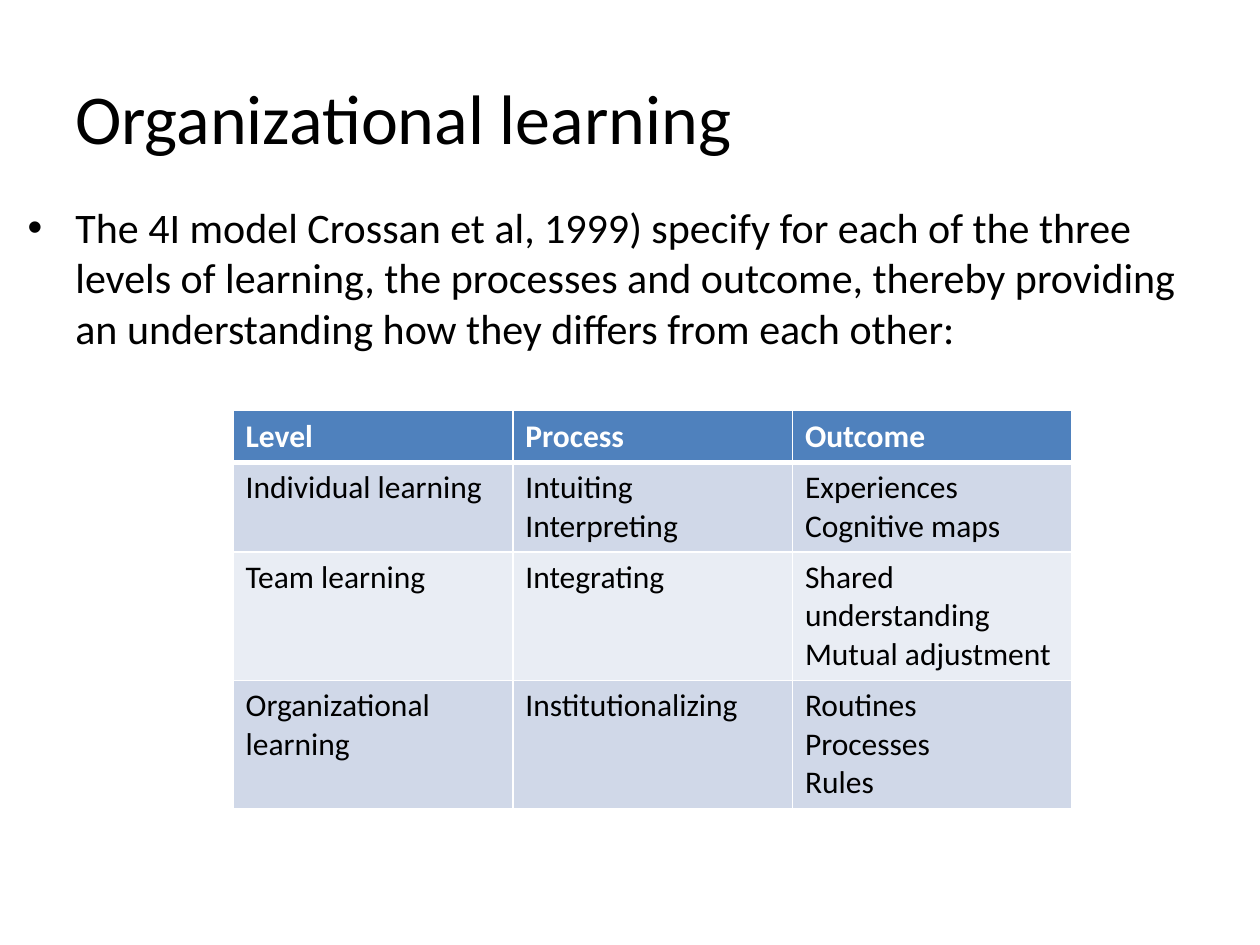
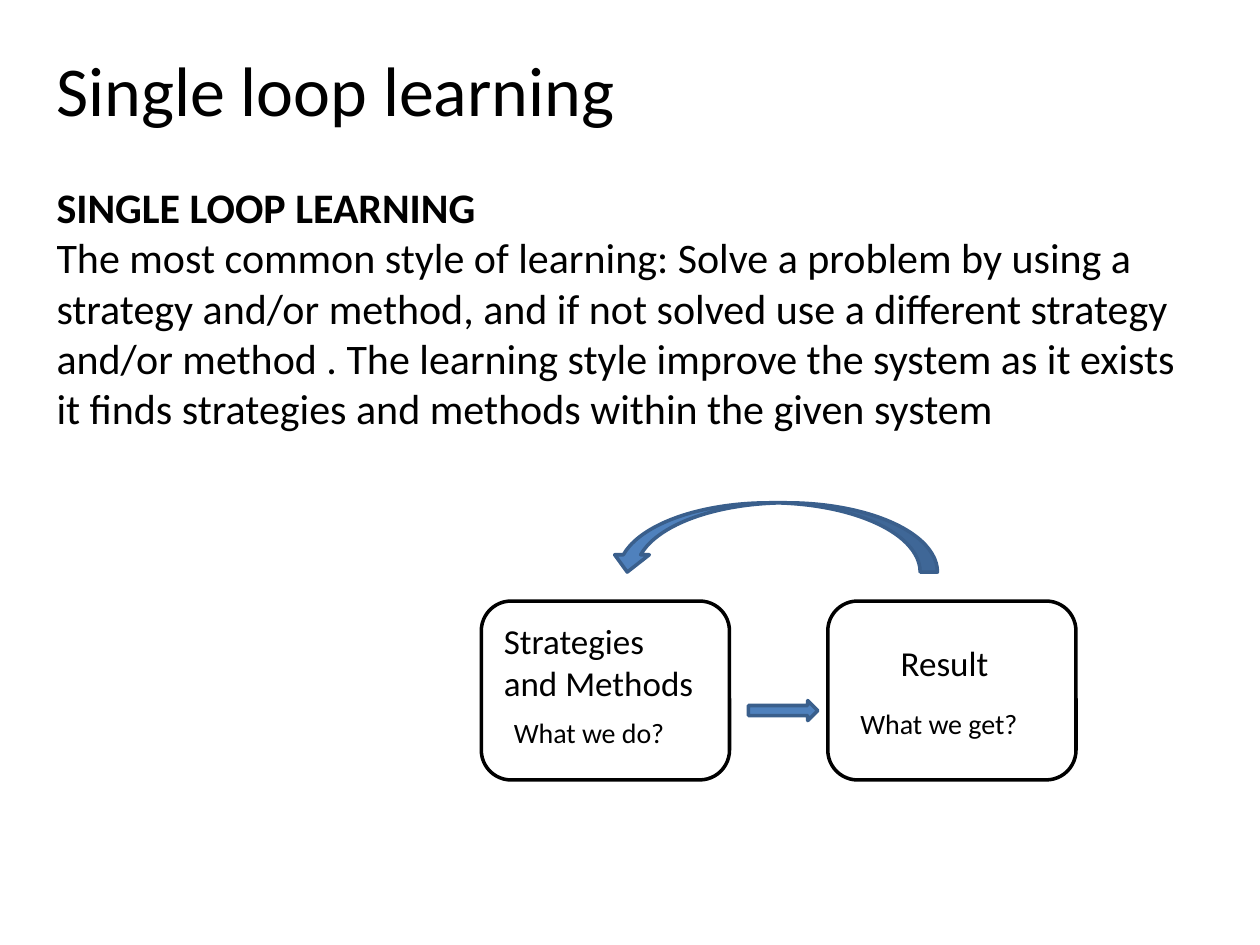
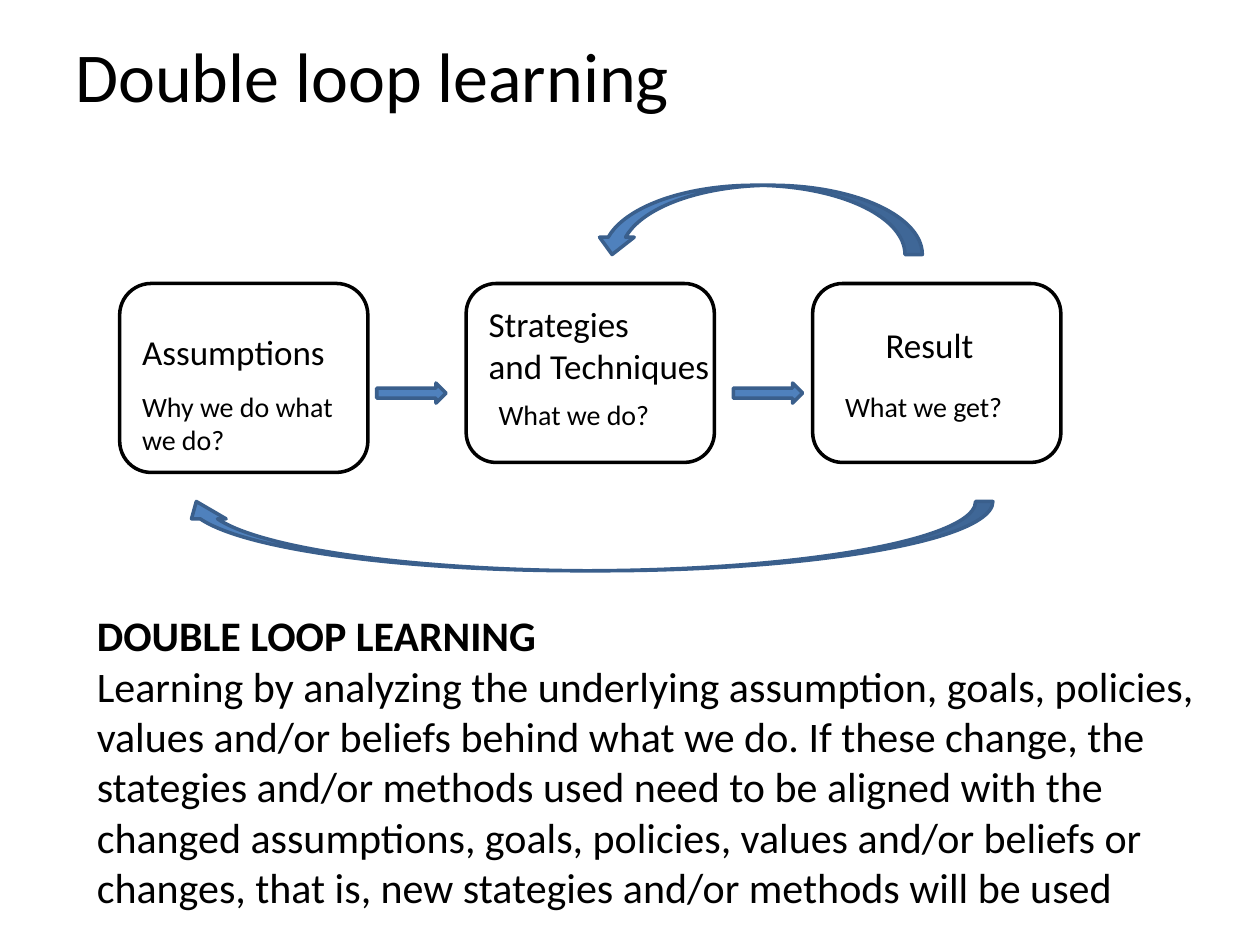
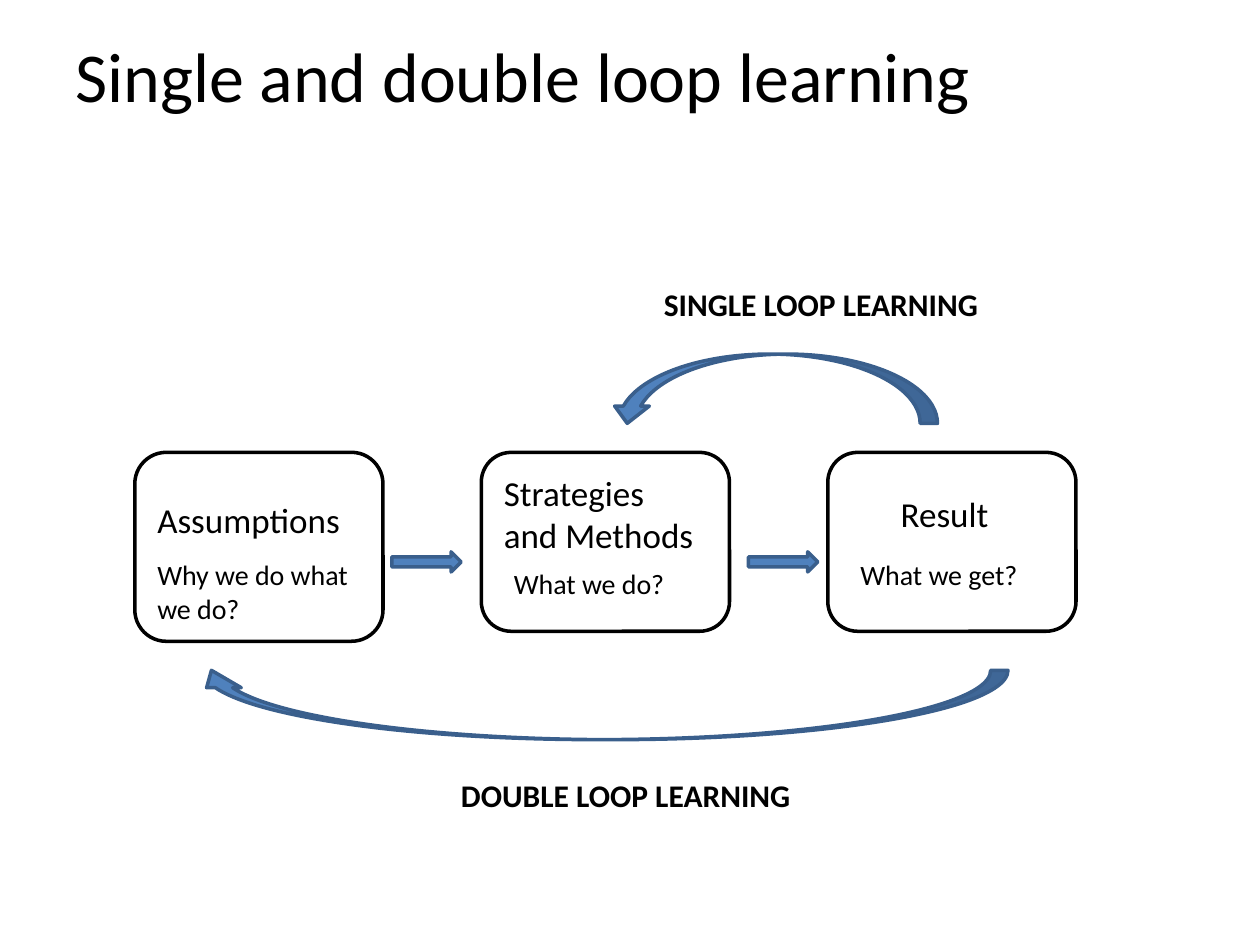
from lxml.etree import SubElement
from pptx import Presentation
from pptx.dml.color import RGBColor
from pptx.enum.shapes import MSO_SHAPE
from pptx.enum.text import MSO_ANCHOR, MSO_AUTO_SIZE
from pptx.oxml import parse_xml
from pptx.oxml.ns import nsdecls, qn
from pptx.util import Inches, Pt

FONT = "Calibri"
COLORS = {
    "text": "000000", "paper": "FFFFFF", "accent": "4F81BD",
    "accent_line": "3A5F8C", "band_dark": "D0D8E8", "band_light": "E9EDF4",
}

INTRO = ("The 4I model Crossan et al, 1999) specify for each of the three levels of "
         "learning, the processes and outcome, thereby providing an understanding how "
         "they differs from each other:")
LEVELS = [
    ("Level", "Process", "Outcome"),
    ("Individual learning", "Intuiting\nInterpreting", "Experiences\nCognitive maps"),
    ("Team learning", "Integrating", "Shared understanding\nMutual adjustment"),
    ("Organizational learning", "Institutionalizing", "Routines\nProcesses\nRules"),
]
ROW_HEIGHTS = (0.41, 0.71, 1.02, 1.02)
COLUMN_WIDTH = 2.22

SINGLE, DOUBLE = "SINGLE LOOP LEARNING", "DOUBLE LOOP LEARNING"
SINGLE_TEXT = ("The most common style of learning: Solve a problem by using a strategy "
               "and/or method, and if not solved use a different strategy and/or method . "
               "The learning style improve the system as it exists it finds strategies and "
               "methods within the given system")
DOUBLE_TEXT = ("Learning by analyzing the underlying assumption, goals, policies, values "
               "and/or beliefs behind what we do. If these change, the stategies and/or "
               "methods used need to be aligned with the changed assumptions, goals, "
               "policies, values and/or beliefs or changes, that is, new stategies and/or "
               "methods will be used")

# Each step: heading, its offset in the box, question, its offset, box height
ASSUMPTIONS = ("Assumptions", (0.08, 0.32), "Why we do what we do?", (0.08, 0.79), 1.5)
METHODS = ("Strategies\nand Methods", (0.08, 0.1), "What we do?", (0.16, 0.86), 1.42)
TECHNIQUES = ("Strategies\nand Techniques", *METHODS[1:])
RESULT = ("Result", (0.48, 0.27), "What we get?", (0.16, 0.79), 1.42)

BOX_WIDTH, BOX_PITCH = 1.97, 2.75
ARROW_OFFSETS = (2.04, 4.87)
ARC_HEIGHT = 0.55


def rgb(name):
    return RGBColor.from_string(COLORS[name])


def style(paragraph, size, color="text", bold=False):
    font = paragraph.font
    font.name, font.size, font.bold = FONT, Pt(size), bold
    font.color.rgb = rgb(color)


def add_text(slide, text, left, top, width, height, size, bold=False):
    box = slide.shapes.add_textbox(*map(Inches, (left, top, width, height)))
    frame = box.text_frame
    frame.word_wrap = True
    frame.text = text
    for paragraph in frame.paragraphs:
        style(paragraph, size, bold=bold)
    return frame


def add_label(slide, *args, **options):
    frame = add_text(slide, *args, **options)
    frame.auto_size = MSO_AUTO_SIZE.SHAPE_TO_FIT_TEXT
    return frame


def add_title_slide(presentation, title, left, top):
    slide = presentation.slides.add_slide(presentation.slide_layouts[6])
    frame = add_text(slide, title, left, top, 9, 1.25, 40)
    frame.vertical_anchor = MSO_ANCHOR.MIDDLE
    return slide


def add_shape(slide, kind, left, top, width, height, fill="accent", line="accent_line"):
    shape = slide.shapes.add_shape(kind, *map(Inches, (left, top, width, height)))
    shape.shadow.inherit = False
    shape.fill.solid()
    shape.fill.fore_color.rgb = rgb(fill)
    shape.line.color.rgb = rgb(line)
    shape.line.width = Pt(2)
    return shape


def add_explanation(slide, heading, text, left, top, width, height):
    frame = add_label(slide, f"{heading}\n{text}", left, top, width, height, 24)
    frame.paragraphs[0].font.bold = True


def add_bullet(paragraph, indent):
    properties = paragraph._p.get_or_add_pPr()
    properties.set("marL", str(Inches(indent)))
    properties.set("indent", str(-Inches(indent)))
    SubElement(properties, qn("a:buFont")).set("typeface", "Arial")
    SubElement(properties, qn("a:buChar")).set("char", "•")


def set_borders(cell, **widths):
    properties = cell._tc.get_or_add_tcPr()
    for index, side in enumerate("LRTB"):
        width = Pt(widths.get(side, 1))
        properties.insert(index, parse_xml(
            f'<a:ln{side} {nsdecls("a")} w="{width}"><a:solidFill>'
            f'<a:srgbClr val="{COLORS["paper"]}"/></a:solidFill></a:ln{side}>'))


def add_levels_table(slide, left, top):
    columns = len(LEVELS[0])
    table = slide.shapes.add_table(
        len(LEVELS), columns, Inches(left), Inches(top),
        Inches(columns * COLUMN_WIDTH), Inches(sum(ROW_HEIGHTS))).table
    for column in table.columns:
        column.width = Inches(COLUMN_WIDTH)
    for row, texts in enumerate(LEVELS):
        table.rows[row].height = Inches(ROW_HEIGHTS[row])
        header = row == 0
        fill = "accent" if header else "band_dark" if row % 2 else "band_light"
        for column, text in enumerate(texts):
            cell = table.cell(row, column)
            cell.text = text
            cell.fill.solid()
            cell.fill.fore_color.rgb = rgb(fill)
            set_borders(cell, B=3 if header else 1, T=3 if row == 1 else 1)
            for paragraph in cell.text_frame.paragraphs:
                style(paragraph, 18, "paper" if header else "text", header)


def add_loop(slide, left, top, steps):
    """Draw the steps right-aligned in three columns; three steps also get the double loop."""
    first = 3 - len(steps)
    for column, step in enumerate(steps, first):
        heading, heading_offset, question, question_offset, height = step
        x = left + column * BOX_PITCH
        add_shape(slide, MSO_SHAPE.ROUNDED_RECTANGLE, x, top, BOX_WIDTH, height,
                  "paper", "text")
        add_label(slide, heading, x + heading_offset[0], top + heading_offset[1],
                  2.2, 0.77 if "\n" in heading else 0.44, 20)
        add_label(slide, question, x + question_offset[0], top + question_offset[1],
                  BOX_WIDTH, 0.64 if step is ASSUMPTIONS else 0.37, 16)
    for offset in ARROW_OFFSETS[first:]:
        add_shape(slide, MSO_SHAPE.RIGHT_ARROW, left + offset, top + 0.79, 0.55, 0.16)
    arcs = [(MSO_SHAPE.CURVED_UP_ARROW, 3.77, -0.78, 2.6)]
    if first == 0:
        arcs.append((MSO_SHAPE.CURVED_DOWN_ARROW, 0.47, 1.73, 6.46))
    for kind, x, y, width in arcs:
        add_shape(slide, kind, left + x, top + y, width, ARC_HEIGHT).rotation = 180


def main():
    presentation = Presentation()
    presentation.slide_width, presentation.slide_height = Inches(10), Inches(7.5)

    slide = add_title_slide(presentation, "Organizational learning", 0.5, 0.3)
    intro = add_text(slide, INTRO, 0.12, 1.55, 9.38, 1.41, 24).paragraphs[0]
    intro.space_before = Pt(4.8)
    add_bullet(intro, 0.38)
    add_levels_table(slide, 1.85, 3.26)

    slide = add_title_slide(presentation, "Single loop learning", 0.35, 0.08)
    add_loop(slide, 1.07, 4.77, [METHODS, RESULT])
    add_explanation(slide, SINGLE, SINGLE_TEXT, 0.35, 1.39, 9.15, 2.12)

    slide = add_title_slide(presentation, "Double loop learning", 0.5, -0.03)
    add_loop(slide, 0.95, 2.25, [ASSUMPTIONS, TECHNIQUES, RESULT])
    add_explanation(slide, DOUBLE, DOUBLE_TEXT, 0.67, 4.79, 8.94, 2.52)

    slide = add_title_slide(presentation, "Single and double loop learning", 0.5, -0.03)
    add_loop(slide, 1.07, 3.59, [ASSUMPTIONS, METHODS, RESULT])
    for text, left, top in ((SINGLE, 5.17, 2.21), (DOUBLE, 3.56, 6.11)):
        add_label(slide, text, left, top, 4.02, 0.4, 18, bold=True)

    presentation.save("out.pptx")


if __name__ == "__main__":
    main()
